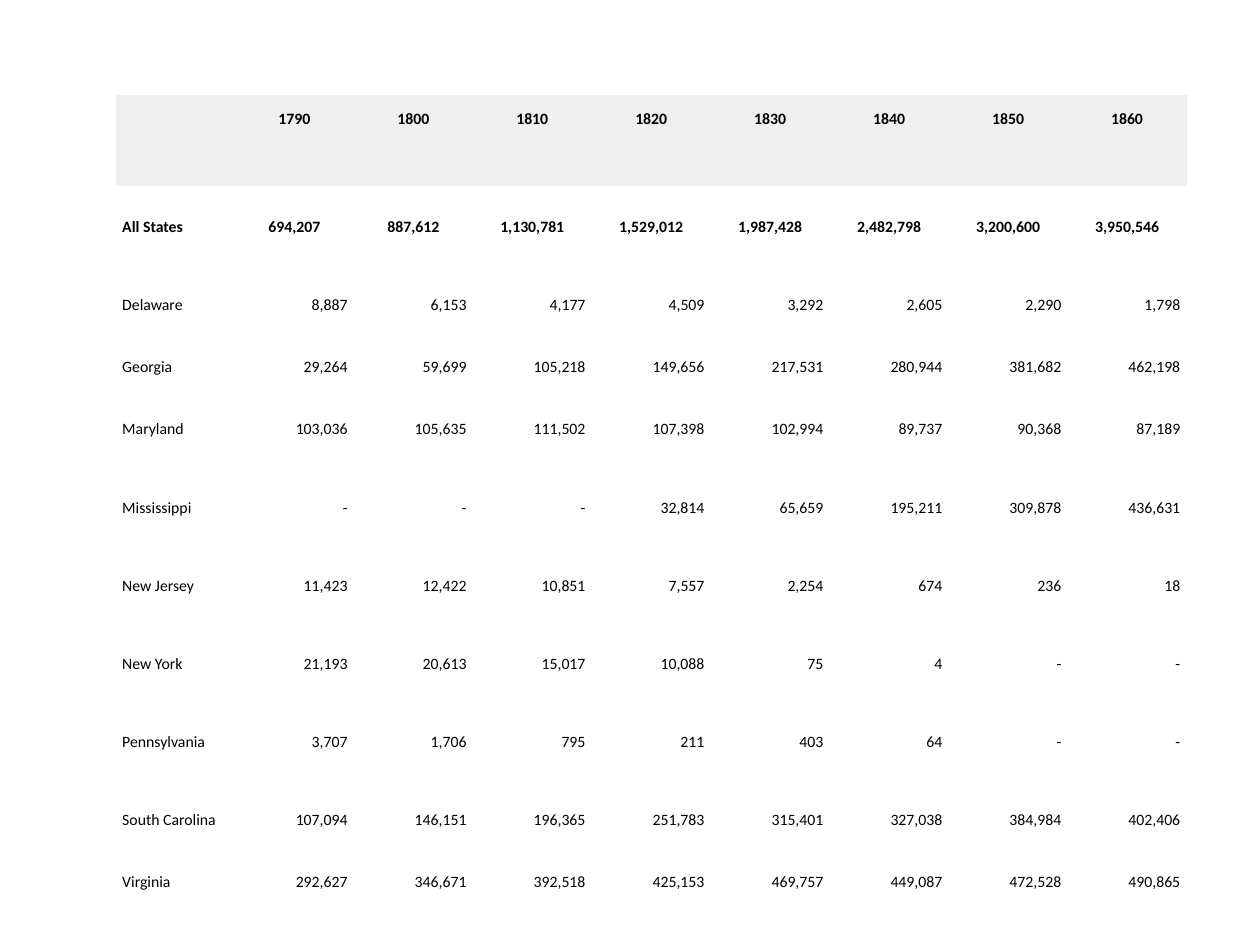
from lxml.etree import SubElement
from pptx import Presentation
from pptx.dml.color import RGBColor
from pptx.enum.text import MSO_ANCHOR as Anchor, PP_ALIGN as Align
from pptx.oxml.ns import qn
from pptx.util import Inches, Pt

NO_GRID_STYLE = "{2D5ABB26-0587-4C30-8999-92F81FD0307C}"
FONT_SIZE = 9


def color(hex_string):
    return RGBColor.from_string(hex_string)


def write_cell(cell, text, fill="FFFFFF", bold=False, align=Align.LEFT):
    cell.fill.solid()
    cell.fill.fore_color.rgb = color(fill)
    cell.margin_left = cell.margin_right = Inches(0.05)
    cell.margin_top = cell.margin_bottom = Inches(0.05)
    cell.vertical_anchor = Anchor.MIDDLE
    line = cell.text_frame.paragraphs[0]
    line.alignment = align
    if not text:
        # Keep an empty cell from growing to the default text size
        SubElement(line._p, qn("a:endParaRPr"), sz=str(FONT_SIZE * 100))
        return
    line.line_spacing = 1.15
    line.space_after = Pt(10)
    run = line.add_run()
    run.text = text
    run.font.name = "Calibri"
    run.font.size = Pt(FONT_SIZE)
    run.font.bold = bold
    run.font.color.rgb = color("000000")


# Content: two header rows, the total, then one row per state
years = [""] + [str(year) for year in range(1790, 1861, 10)]
spacer = [""] * len(years)
totals = ["All States", "694,207", "887,612", "1,130,781", "1,529,012",
          "1,987,428", "2,482,798", "3,200,600", "3,950,546"]
states = [
    ["Delaware", "8,887", "6,153", "4,177", "4,509", "3,292", "2,605", "2,290", "1,798"],
    ["Georgia", "29,264", "59,699", "105,218", "149,656", "217,531", "280,944", "381,682", "462,198"],
    ["Maryland", "103,036", "105,635", "111,502", "107,398", "102,994", "89,737", "90,368", "87,189"],
    ["Mississippi", "-", "-", "-", "32,814", "65,659", "195,211", "309,878", "436,631"],
    ["New Jersey", "11,423", "12,422", "10,851", "7,557", "2,254", "674", "236", "18"],
    ["New York", "21,193", "20,613", "15,017", "10,088", "75", "4", "-", "-"],
    ["Pennsylvania", "3,707", "1,706", "795", "211", "403", "64", "-", "-"],
    ["South Carolina", "107,094", "146,151", "196,365", "251,783", "315,401", "327,038", "384,984", "402,406"],
    ["Virginia", "292,627", "346,671", "392,518", "425,153", "469,757", "449,087", "472,528", "490,865"],
]
census = [years, spacer, totals] + states

# Slide
deck = Presentation()
deck.slide_width, deck.slide_height = Inches(10), Inches(7.5)
slide = deck.slides.add_slide(deck.slide_layouts[6])

# Table grid: equal columns, tall rows except for a few short ones
TALL, SHORT = 0.62, 0.37
short_rows = {"": SHORT, "Georgia": SHORT, "Virginia": SHORT}
row_heights = [short_rows.get(row[0], TALL) for row in census]
row_heights[1] = 0.36
table = slide.shapes.add_table(
    len(census), len(years), Inches(0.92), Inches(0.75),
    Inches(8.5), Inches(sum(row_heights))).table
table.first_row = table.horz_banding = False
table._tbl.tblPr.find(qn("a:tableStyleId")).text = NO_GRID_STYLE
for column in table.columns:
    column.width = Inches(8.5 / len(years))

# Cells: grey header, bold centred totals, right-aligned state counts
for r, (row, height) in enumerate(zip(census, row_heights)):
    table.rows[r].height = Inches(height)
    is_header, is_state = r < 2, r > 2
    for c, text in enumerate(row):
        count_align = Align.RIGHT if is_state else Align.CENTER
        write_cell(table.cell(r, c), text,
                   fill="EFEFEF" if is_header else "FFFFFF",
                   bold=not is_state,
                   align=count_align if c else Align.LEFT)

deck.save("out.pptx")
